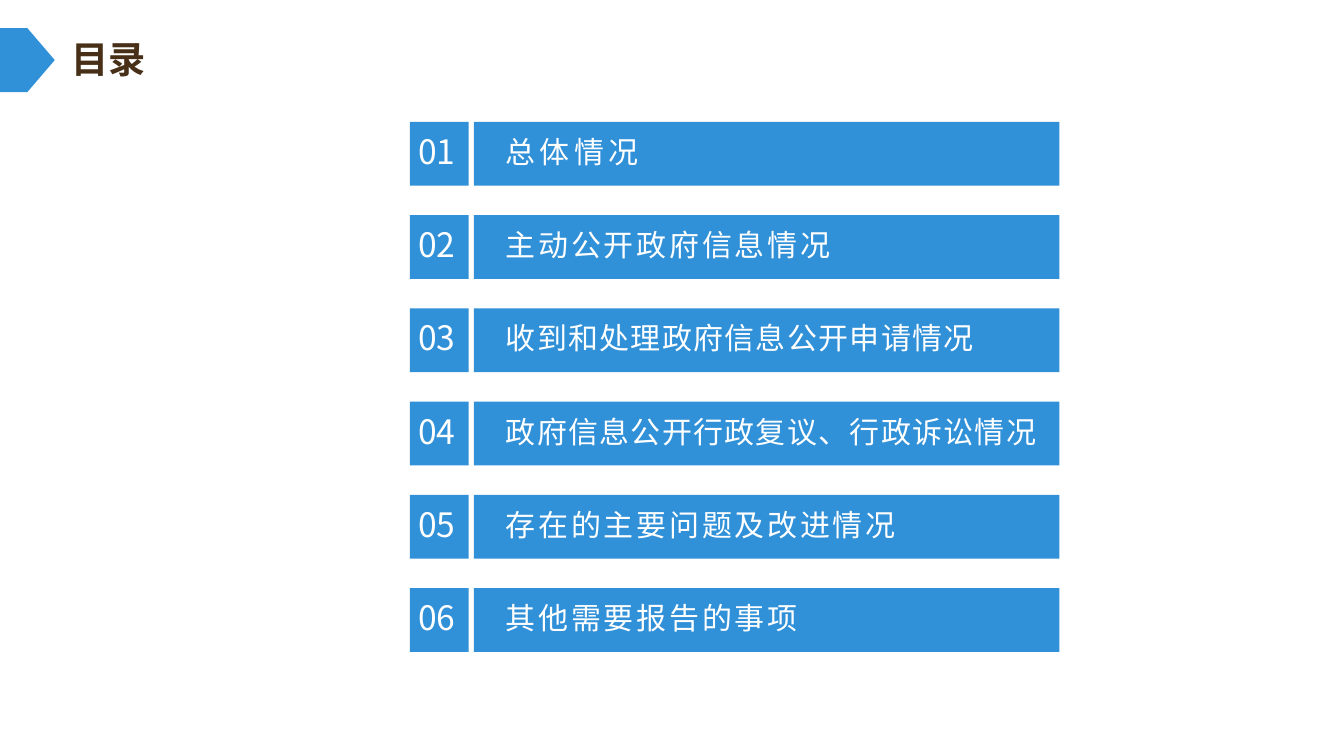
from pptx import Presentation
from pptx.dml.color import RGBColor
from pptx.enum.shapes import MSO_SHAPE
from pptx.enum.text import MSO_ANCHOR, MSO_AUTO_SIZE, PP_ALIGN
from pptx.oxml.ns import qn
from pptx.util import Cm, Pt
from lxml import etree

RECTANGLE, PENTAGON = MSO_SHAPE.RECTANGLE, MSO_SHAPE.PENTAGON
TOP, LEFT = MSO_ANCHOR.TOP, PP_ALIGN.LEFT
GROW = MSO_AUTO_SIZE.SHAPE_TO_FIT_TEXT

COLORS = {"blue": "3090D8", "brown": "483018", "white": "FFFFFF"}
FONT = "Noto Sans CJK SC"
TITLE_ONLY = 5

FIRST_TOP, ROW_STEP, ROW_HEIGHT = 3.07, 2.35, 1.61

# Chapter title, letter spacing in points, label width in cm
CHAPTERS = [
    ("总体情况", 3, 4.37),
    ("主动公开政府信息情况", 2, 9.73),
    ("收到和处理政府信息公开申请情况", 1, 14.2),
    ("政府信息公开行政复议、行政诉讼情况", 1, 15.98),
    ("存在的主要问题及改进情况", 2, 11.51),
    ("其他需要报告的事项", 2, 8.84),
]


class ContentsSlide:
    def __init__(self, deck):
        self.slide = deck.slides.add_slide(deck.slide_layouts[TITLE_ONLY])

    def set_line(self, box, text, size, color, wrap=False, bold=False, spacing=0):
        """Fill a text holder with one left-aligned, styled line."""
        frame = box.text_frame
        frame.text = text
        frame.word_wrap = wrap
        frame.auto_size = GROW
        frame.vertical_anchor = TOP
        paragraph = frame.paragraphs[0]
        paragraph.alignment = LEFT
        run = paragraph.runs[0]
        run.font.name = FONT
        run.font.size = Pt(size)
        run.font.bold = bold
        run.font.color.rgb = RGBColor.from_string(COLORS[color])
        properties = run._r.get_or_add_rPr()
        etree.SubElement(properties, qn("a:ea"), typeface=FONT)
        if spacing:
            properties.set("spc", str(spacing * 100))

    def title(self, text, left, top, width, height):
        heading = self.slide.shapes.title
        heading.left, heading.top = Cm(left), Cm(top)
        heading.width, heading.height = Cm(width), Cm(height)
        self.set_line(heading, text, 26.6, "brown", bold=True)

    def block(self, parent, kind, left, top, width, height):
        block = parent.shapes.add_shape(
            kind, Cm(left), Cm(top), Cm(width), Cm(height))
        block.shadow.inherit = False
        block.fill.solid()
        block.fill.fore_color.rgb = RGBColor.from_string(COLORS["blue"])
        block.line.fill.background()

    def label(self, parent, text, left, top, width, height, size, **style):
        label = parent.shapes.add_textbox(
            Cm(left), Cm(top), Cm(width), Cm(height))
        self.set_line(label, text, size, "white", **style)

    def chapter(self, number, name, spacing, width):
        top = FIRST_TOP + (number - 1) * ROW_STEP
        self.block(self.slide, RECTANGLE, 10.33, top, 1.48, ROW_HEIGHT)
        self.label(self.slide, f"{number:02}", 10.29, top + 0.1, 1.45, 1.27, 24)
        bar = self.slide.shapes.add_group_shape()
        self.block(bar, RECTANGLE, 11.94, top, 14.76, ROW_HEIGHT)
        self.label(bar, name, 12.5, top + 0.17, width, 1.17, 21.4,
                   wrap=True, spacing=spacing)


def main():
    deck = Presentation()
    deck.slide_width, deck.slide_height = Cm(33.87), Cm(19.05)
    contents = ContentsSlide(deck)
    contents.block(contents.slide, PENTAGON, 0, 0.71, 1.38, ROW_HEIGHT)
    contents.title("目录", 1.55, 0.79, 2.41, 1.4)
    for number, (name, spacing, width) in enumerate(CHAPTERS, start=1):
        contents.chapter(number, name, spacing, width)
    deck.save("out.pptx")


if __name__ == "__main__":
    main()
